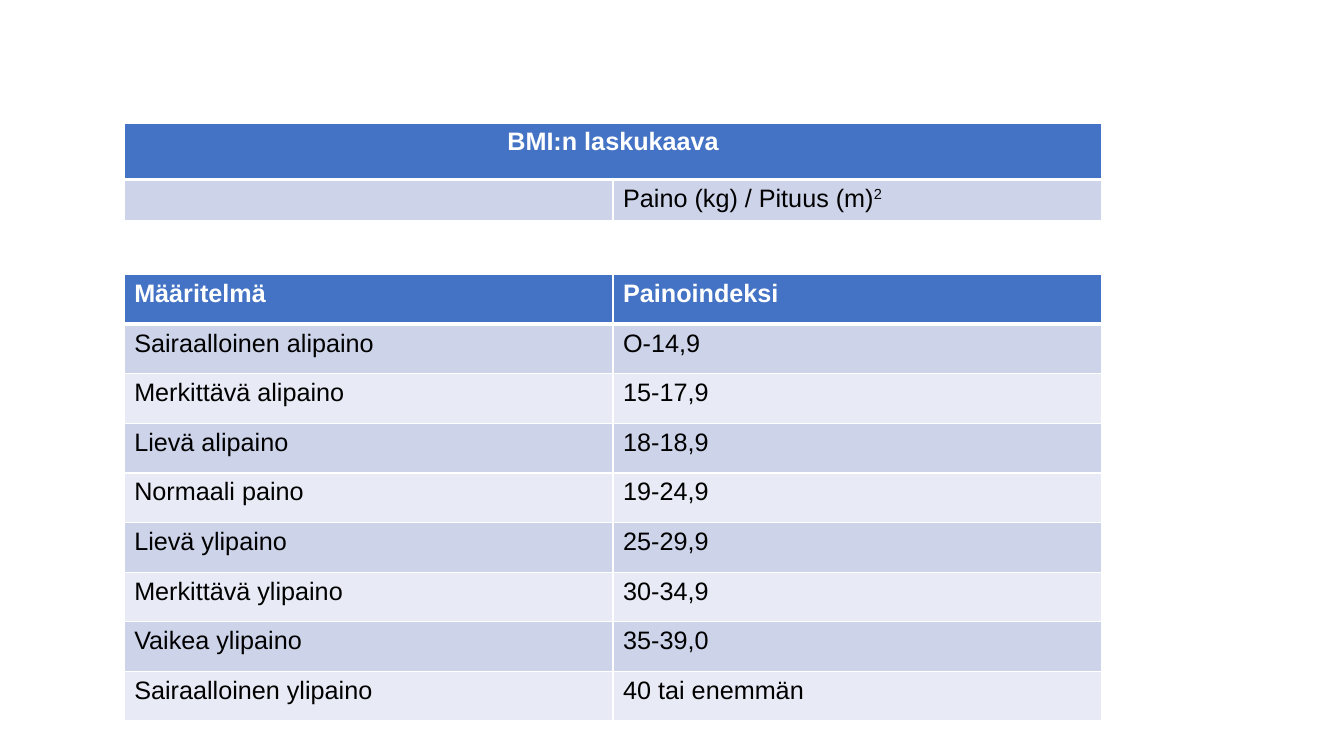
import pptx
import pptx.dml.color
import pptx.enum.text
import pptx.oxml
import pptx.oxml.ns
import pptx.util
from pptx.util import Cm

COLORS = {
    "header": "4472C4",
    "odd": "CDD4EA",
    "even": "E8EBF5",
    "border": "FFFFFF",
    "header_text": "FFFFFF",
    "body_text": "000000",
}

FORMULA_BOX = (Cm(3.13), Cm(3.1), Cm(24.64), Cm(2.45))
FORMULA_HEADER_HEIGHT = Cm(1.42)
CLASSES_BOX = (Cm(3.13), Cm(6.92), Cm(24.64), Cm(11.25))

WEIGHT_CLASSES = [
    ("Määritelmä", "Painoindeksi"),
    ("Sairaalloinen alipaino", "O-14,9"),
    ("Merkittävä alipaino", "15-17,9"),
    ("Lievä alipaino", "18-18,9"),
    ("Normaali paino", "19-24,9"),
    ("Lievä ylipaino", "25-29,9"),
    ("Merkittävä ylipaino", "30-34,9"),
    ("Vaikea ylipaino", "35-39,0"),
    ("Sairaalloinen ylipaino", "40 tai enemmän"),
]


def rgb(name):
    return pptx.dml.color.RGBColor.from_string(COLORS[name])


def add_borders(cell, row):
    properties = cell._tc.get_or_add_tcPr()
    widths = {"L": 1, "R": 1, "T": 3 if row == 1 else 1, "B": 3 if row == 0 else 1}
    for side, points in widths.items():
        properties.append(pptx.oxml.parse_xml(
            f'<a:ln{side} {pptx.oxml.ns.nsdecls("a")} w="{pptx.util.Pt(points)}">'
            f'<a:solidFill><a:srgbClr val="{COLORS["border"]}"/></a:solidFill>'
            f'</a:ln{side}>'))


def add_text(cell, text, row):
    run = cell.text_frame.paragraphs[0].add_run()
    run.text = text
    font_format = {"name": "Arial", "size": pptx.util.Pt(18), "bold": row == 0}
    for attribute, value in font_format.items():
        setattr(run.font, attribute, value)
    run.font.color.rgb = rgb("body_text" if row else "header_text")
    return run


def add_banded_table(slide, box, rows):
    table = slide.shapes.add_table(len(rows), len(rows[0]), *box).table
    for row, texts in enumerate(rows):
        for column, text in enumerate(texts):
            cell = table.cell(row, column)
            add_borders(cell, row)
            cell.fill.solid()
            band = "odd" if row % 2 else "even"
            cell.fill.fore_color.rgb = rgb(band if row else "header")
            if text:
                add_text(cell, text, row)
    return table


def add_formula(slide, box):
    rows = [("BMI:n laskukaava", ""), ("", "Paino (kg) / Pituus (m)")]
    table = add_banded_table(slide, box, rows)
    table.rows[0].height = FORMULA_HEADER_HEIGHT
    table.rows[1].height = box[3] - FORMULA_HEADER_HEIGHT
    heading = table.cell(0, 0)
    heading.merge(table.cell(0, 1))
    heading.text_frame.paragraphs[0].alignment = pptx.enum.text.PP_ALIGN.CENTER
    exponent = add_text(table.cell(1, 1), "2", 1)
    exponent._r.get_or_add_rPr().set("baseline", "30000")


def main():
    presentation = pptx.Presentation()
    presentation.slide_width = Cm(33.87)
    presentation.slide_height = Cm(19.05)
    slide = presentation.slides.add_slide(presentation.slide_layouts[6])
    add_banded_table(slide, CLASSES_BOX, WEIGHT_CLASSES)
    add_formula(slide, FORMULA_BOX)
    presentation.save("out.pptx")


if __name__ == "__main__":
    main()
